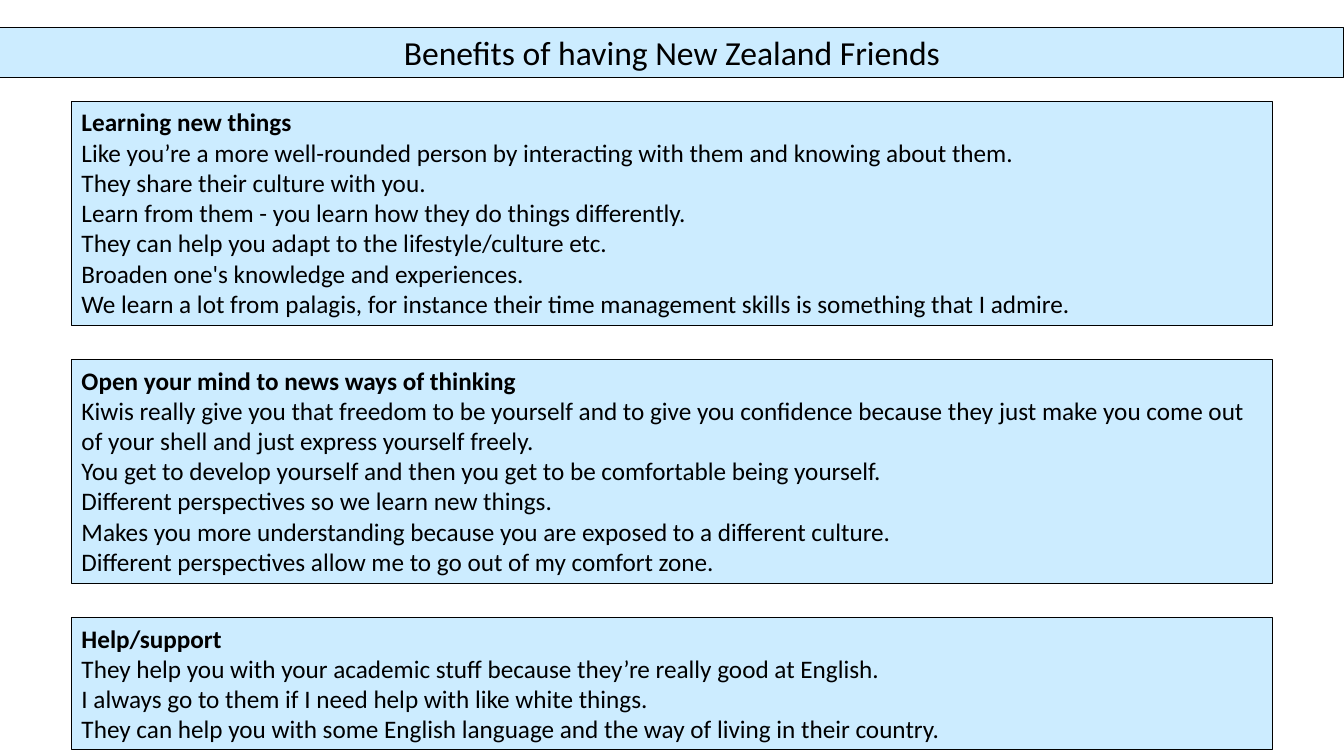
"""Build the slide on the benefits of having New Zealand friends."""
from pptx import Presentation
from pptx.dml.color import RGBColor
from pptx.enum.shapes import MSO_SHAPE
from pptx.enum.text import MSO_ANCHOR, MSO_AUTO_SIZE, PP_ALIGN
from pptx.util import Inches, Pt

PALE_BLUE = RGBColor(0xCC, 0xEC, 0xFF)
BLACK = RGBColor(0, 0, 0)

BENEFITS = [
    ("Learning new things", 2.22, [
        "Like you’re a more well-rounded person by interacting with them and knowing about them.",
        "They share their culture with you.",
        "Learn from them - you learn how they do things differently.",
        "They can help you adapt to the lifestyle/culture etc.",
        "Broaden one's knowledge and experiences.",
        "We learn a lot from palagis, for instance their time management skills is something that I admire.",
    ]),
    ("Open your mind to news ways of thinking", 2.22, [
        "Kiwis really give you that freedom to be yourself and to give you confidence because "
        "they just make you come out of your shell and just express yourself freely.",
        "You get to develop yourself and then you get to be comfortable being yourself.",
        "Different perspectives so we learn new things.",
        "Makes you more understanding because you are exposed to a different culture.",
        "Different perspectives allow me to go out of my comfort zone.",
    ]),
    ("Help/support", 1.31, [
        "They help you with your academic stuff because they’re really good at English.",
        "I always go to them if I need help with like white things.",
        "They can help you with some English language and the way of living in their country.",
    ]),
]

presentation = Presentation()
presentation.slide_width = Inches(13.33)
presentation.slide_height = Inches(7.5)
slide = presentation.slides.add_slide(presentation.slide_layouts[6])


def add_box(left, top, width, height):
    shape = slide.shapes.add_shape(
        MSO_SHAPE.RECTANGLE, Inches(left), Inches(top), Inches(width), Inches(height))
    shape.shadow.inherit = False
    shape.fill.solid()
    shape.fill.fore_color.rgb = PALE_BLUE
    shape.line.color.rgb = BLACK
    shape.line.width = Pt(0.75)
    frame = shape.text_frame
    frame.word_wrap = True
    frame.auto_size = MSO_AUTO_SIZE.SHAPE_TO_FIT_TEXT
    frame.vertical_anchor = MSO_ANCHOR.TOP
    return frame


def write_text(paragraph, text, size=18, bold=False, align=PP_ALIGN.LEFT):
    paragraph.alignment = align
    run = paragraph.add_run()
    run.text = text
    run.font.name = "Calibri"
    run.font.size = Pt(size)
    run.font.bold = bold
    run.font.color.rgb = BLACK


title_frame = add_box(0, 0.27, 13.33, 0.5)
write_text(title_frame.paragraphs[0], "Benefits of having New Zealand Friends",
           size=24, align=PP_ALIGN.CENTER)

top = 1.01
gap = 0.34
for heading, height, comments in BENEFITS:
    frame = add_box(0.71, top, 11.91, height)
    write_text(frame.paragraphs[0], heading, bold=True)
    for comment in comments:
        write_text(frame.add_paragraph(), comment)
    top += height + gap

presentation.save("out.pptx")
